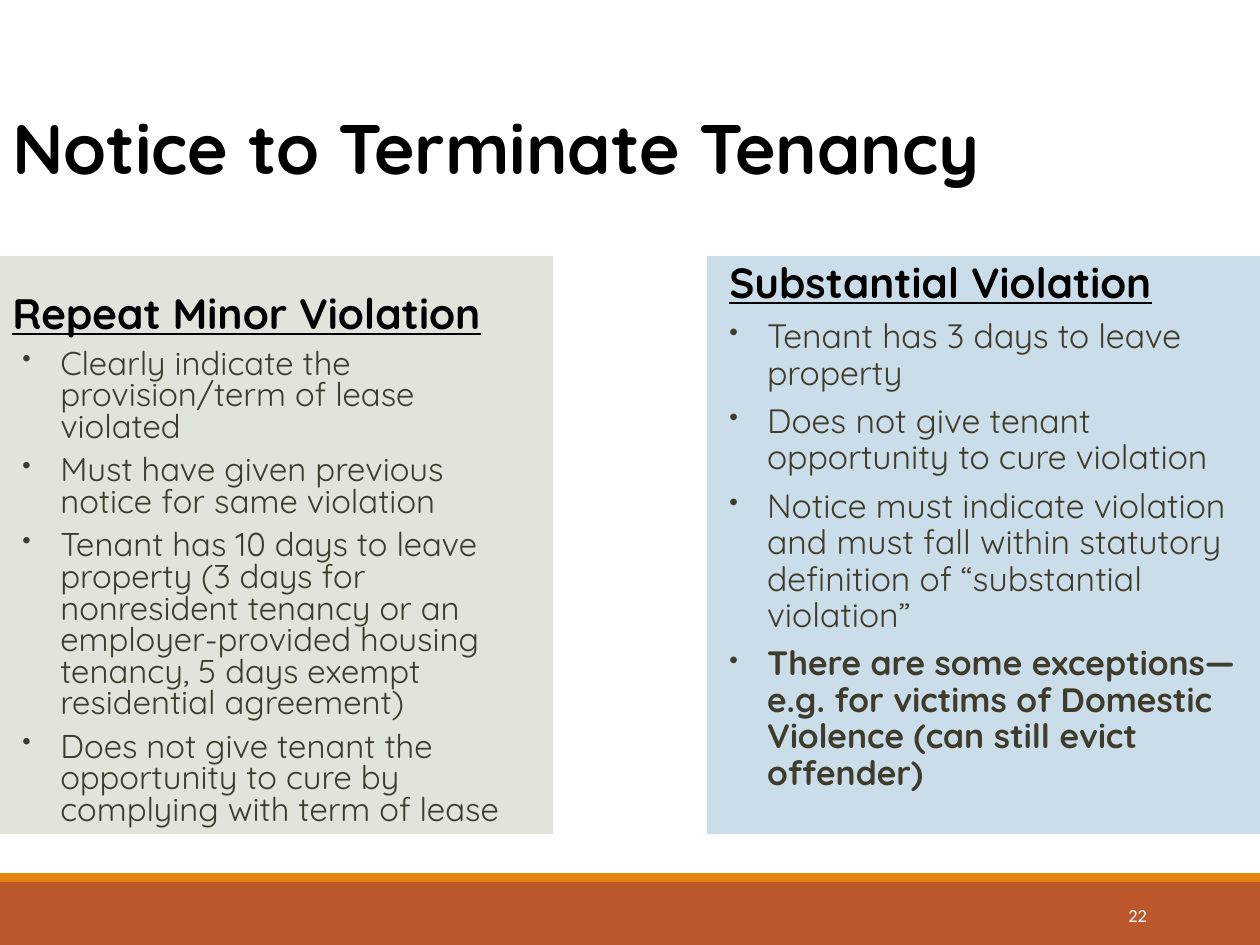
"""Build the slide on notices to terminate a tenancy."""
from lxml.etree import SubElement
from pptx import Presentation
from pptx.dml.color import RGBColor
from pptx.enum.shapes import MSO_SHAPE as Shape
from pptx.enum.text import MSO_ANCHOR as Anchor, MSO_AUTO_SIZE as AutoSize, PP_ALIGN as Align
from pptx.oxml.ns import qn
from pptx.util import Inches, Pt

BLACK = RGBColor(0x00, 0x00, 0x00)
WHITE = RGBColor(0xFF, 0xFF, 0xFF)
OLIVE = RGBColor(0x3E, 0x3D, 0x2D)
SAGE = RGBColor(0xE0, 0xE4, 0xDB)
SKY = RGBColor(0xCC, 0xDD, 0xEA)
RUST = RGBColor(0xBD, 0x58, 0x2C)
ORANGE = RGBColor(0xE4, 0x83, 0x12)

MINOR_POINTS = [
    "Clearly indicate the provision/term of lease violated",
    "Must have given previous notice for same violation",
    "Tenant has 10 days to leave property (3 days for nonresident tenancy or an "
    "employer-provided housing tenancy, 5 days exempt residential agreement)",
    "Does not give tenant the opportunity to cure by complying with term of lease",
]
SUBSTANTIAL_POINTS = [
    "Tenant has 3 days to leave property",
    "Does not give tenant opportunity to cure violation",
    "Notice must indicate violation and must fall within statutory definition of "
    "“substantial violation”",
    "There are some exceptions—e.g. for victims of Domestic Violence (can still evict offender)",
]


def set_values(target, values):
    for name, value in values.items():
        setattr(target, name, value)


class SlideBuilder:
    font = "Quicksand"
    spacing = {"space_before": Pt(4.8), "space_after": Pt(2)}

    def __init__(self, presentation):
        self.slide = presentation.slides.add_slide(presentation.slide_layouts[5])

    def place(self, shape, box):
        names = ("left", "top", "width", "height")
        set_values(shape, dict(zip(names, map(Inches, box))))

    def add_text(self, paragraph, text, size, color, **style):
        run = paragraph.add_run()
        run.text = text
        run.font.color.rgb = color
        set_values(run.font, {"name": self.font, "size": Pt(size), **style})

    def title(self, text, box):
        shape = self.slide.shapes.title
        self.place(shape, box)
        frame = shape.text_frame
        set_values(frame, {"vertical_anchor": Anchor.BOTTOM, "word_wrap": True,
                           "auto_size": AutoSize.NONE})
        paragraph = frame.paragraphs[0]
        paragraph.alignment = Align.LEFT
        self.add_text(paragraph, text, 40, BLACK, bold=True)

    def rectangle(self, box, color):
        shape = self.slide.shapes.add_shape(Shape.RECTANGLE, *map(Inches, box))
        shape.shadow.inherit = False
        shape.fill.solid()
        shape.fill.fore_color.rgb = color
        shape.line.fill.background()
        return shape

    def number(self, text, box):
        frame = self.slide.shapes.add_textbox(*map(Inches, box)).text_frame
        set_values(frame, {"vertical_anchor": Anchor.MIDDLE, "word_wrap": True})
        paragraph = frame.paragraphs[0]
        paragraph.alignment = Align.RIGHT
        self.add_text(paragraph, text, 10.5, WHITE, name="Calibri")

    def indent(self, paragraph, margin, first_line):
        properties = paragraph._p.get_or_add_pPr()
        properties.set("marL", str(Inches(margin)))
        properties.set("indent", str(Inches(first_line)))
        return properties

    def bullet(self, paragraph):
        properties = self.indent(paragraph, 0.38, -0.3)
        SubElement(properties, qn("a:buSzPct"), val="76000")
        SubElement(properties, qn("a:buChar"), char="•")

    def panel(self, left, color, anchor, line_spacing, heading, heading_size,
              heading_indent, points, point_size, bold_points=()):
        frame = self.rectangle((left, 2.03, 4.39, 4.59), color).text_frame
        set_values(frame, {"vertical_anchor": anchor, "word_wrap": True})
        layout = {"alignment": Align.LEFT, "line_spacing": line_spacing, **self.spacing}
        paragraph = frame.paragraphs[0]
        set_values(paragraph, layout)
        self.indent(paragraph, *heading_indent)
        self.add_text(paragraph, heading, heading_size, BLACK, bold=True, underline=True)
        for index, point in enumerate(points):
            paragraph = frame.add_paragraph()
            set_values(paragraph, layout)
            self.bullet(paragraph)
            self.add_text(paragraph, point, point_size, OLIVE, bold=index in bold_points)


def main():
    presentation = Presentation()
    set_values(presentation, {"slide_width": Inches(10), "slide_height": Inches(7.5)})
    builder = SlideBuilder(presentation)
    builder.rectangle((0, 7, 10, 0.5), RUST)
    builder.rectangle((0, 6.93, 10, 0.07), ORANGE)
    builder.number("22", (8.12, 7.06, 1.08, 0.4))
    builder.title("Notice to Terminate Tenancy", (0, 0.3, 8.52, 1.25))
    builder.panel(0, SAGE, Anchor.BOTTOM, 0.8, "Repeat Minor Violation", 24.3,
                  (0.1, -0.1), MINOR_POINTS, 18.8)
    builder.panel(5.61, SKY, Anchor.TOP, 0.9, "Substantial Violation", 24.1,
                  (0.08, 0), SUBSTANTIAL_POINTS, 19.3, bold_points=(3,))
    presentation.save("out.pptx")


if __name__ == "__main__":
    main()
